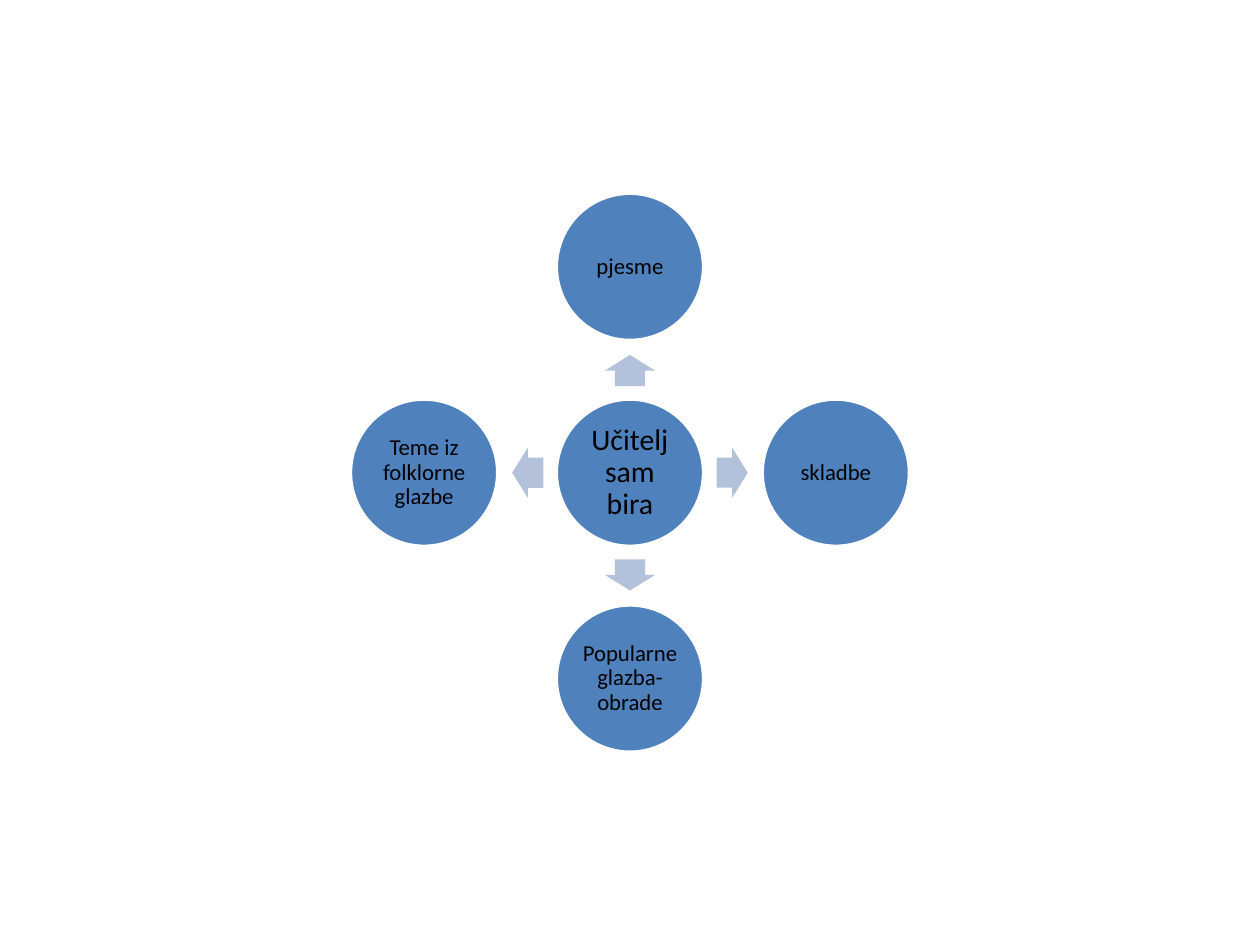
import math

from pptx import Presentation
from pptx import util as u
from pptx.dml.color import RGBColor
from pptx.enum import shapes, text

CENTER_X, CENTER_Y = 12.7, 9.53
TOPIC_DISTANCE, ARROW_DISTANCE = 4.15, 2.06


def color(hex_value):
    return RGBColor.from_string(hex_value)


class RadialDiagram:
    circle_fill, circle_line, arrow_fill = "4F81BD", "FFFFFF", "B3C1DB"
    text_color, font_name = "000000", "Calibri"
    diameter = 2.97
    arrow_length, arrow_width = 0.63, 1.01

    def __init__(self, slide):
        self.slide = slide

    def shape(self, kind, distance, angle, width, height, fill):
        """Add a shape centred at a distance and angle from the hub."""
        x = CENTER_X + distance * math.cos(math.radians(angle))
        y = CENTER_Y + distance * math.sin(math.radians(angle))
        shape = self.slide.shapes.add_shape(
            kind, u.Cm(x - width / 2), u.Cm(y - height / 2), u.Cm(width), u.Cm(height))
        shape.shadow.inherit = False
        shape.fill.solid()
        shape.fill.fore_color.rgb = color(fill)
        return shape

    def circle(self, label, size, distance=0, angle=0):
        circle = self.shape(shapes.MSO_SHAPE.OVAL, distance, angle,
                            self.diameter, self.diameter, self.circle_fill)
        circle.line.color.rgb = color(self.circle_line)
        circle.line.width = u.Pt(2)

        frame = circle.text_frame
        frame.text = label
        frame.word_wrap = True
        frame.vertical_anchor = text.MSO_ANCHOR.MIDDLE
        frame.margin_left = frame.margin_right = u.Cm(0.05)
        frame.margin_top = frame.margin_bottom = u.Cm(0.05)
        paragraph = frame.paragraphs[0]
        paragraph.alignment = text.PP_ALIGN.CENTER
        paragraph.line_spacing = 0.9
        font = paragraph.runs[0].font
        font.name, font.size = self.font_name, u.Pt(size)
        font.color.rgb = color(self.text_color)

    def arrow(self, angle):
        arrow = self.shape(shapes.MSO_SHAPE.RIGHT_ARROW, ARROW_DISTANCE, angle,
                           self.arrow_length, self.arrow_width, self.arrow_fill)
        arrow.line.fill.background()
        arrow.adjustments[0] = 0.6
        arrow.adjustments[1] = 0.5
        arrow.rotation = angle


def main():
    presentation = Presentation()
    presentation.slide_width, presentation.slide_height = u.Cm(25.4), u.Cm(19.05)
    diagram = RadialDiagram(presentation.slides.add_slide(presentation.slide_layouts[6]))

    # Hub
    diagram.circle("Učitelj sam bira", 17)

    # Topics, clockwise from the top
    topics = ["pjesme", "skladbe", "Popularne glazba-obrade", "Teme iz folklorne glazbe"]
    for topic, angle in zip(topics, (270, 0, 90, 180)):
        diagram.arrow(angle)
        diagram.circle(topic, 13, TOPIC_DISTANCE, angle)

    presentation.save("out.pptx")


if __name__ == "__main__":
    main()
